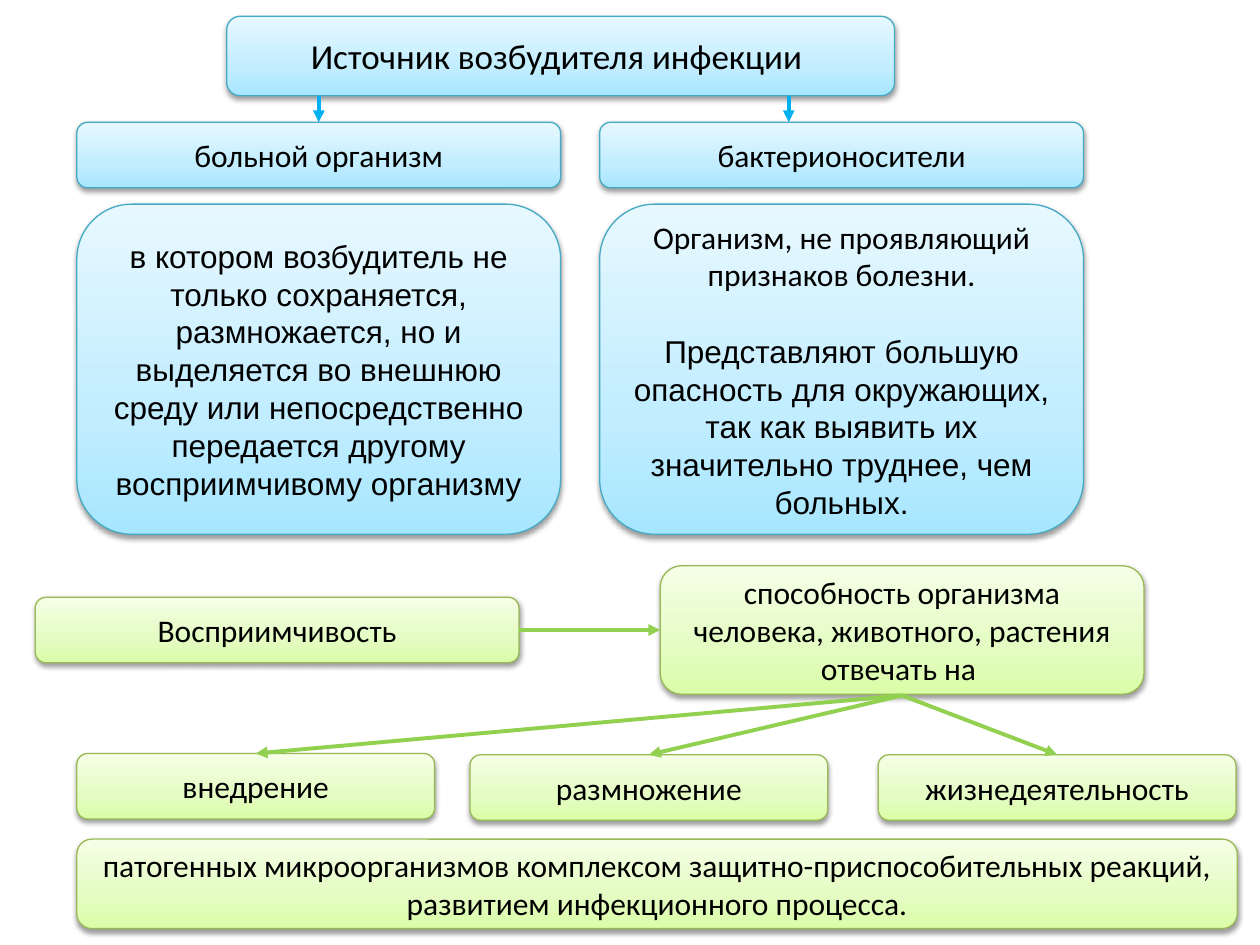
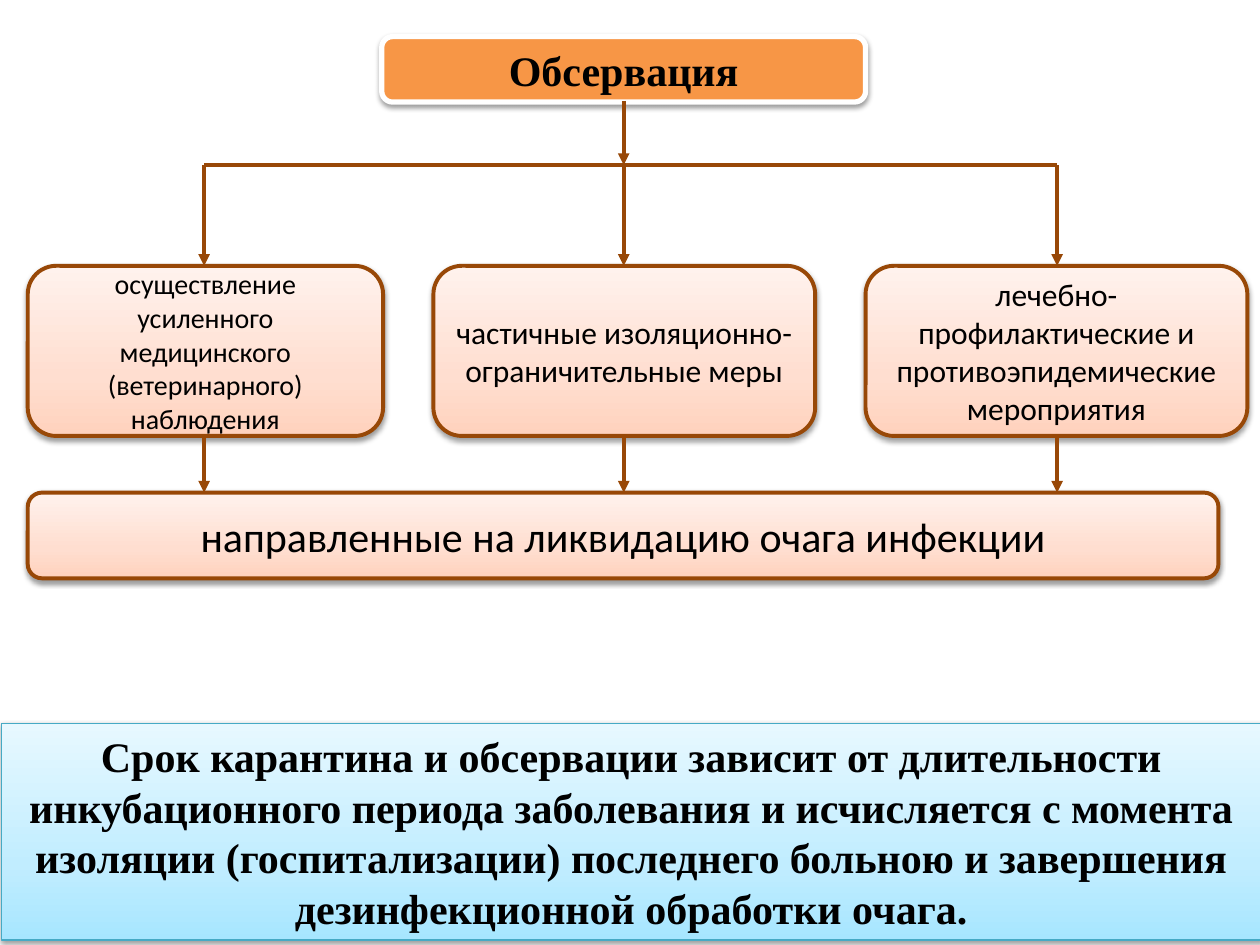
from copy import deepcopy

from lxml import etree
from pptx import Presentation
from pptx.dml.color import RGBColor
from pptx.enum import shapes, text
from pptx.oxml import ns
from pptx.util import Inches, Pt

BLACK = RGBColor(0x00, 0x00, 0x00)
WHITE = RGBColor(0xFF, 0xFF, 0xFF)
SKY = RGBColor(0x00, 0xB0, 0xF0)
LIME = RGBColor(0x92, 0xD0, 0x50)
BROWN = RGBColor(0x98, 0x48, 0x07)
ORANGE = RGBColor(0xF7, 0x96, 0x46)
TEAL = RGBColor(0x46, 0xAA, 0xC5)
OLIVE = RGBColor(0x98, 0xB9, 0x55)

# Gradient stops from bottom to top, at 0, 35 and 100 percent
BLUE_FADE = [RGBColor(0xA7, 0xE6, 0xFF), RGBColor(0xC1, 0xED, 0xFF), RGBColor(0xE7, 0xF8, 0xFF)]
GREEN_FADE = [RGBColor(0xDA, 0xFD, 0xA7), RGBColor(0xE4, 0xFC, 0xC2), RGBColor(0xF5, 0xFF, 0xE7)]
PEACH_FADE = [RGBColor(0xFF, 0xD2, 0xBD), RGBColor(0xFF, 0xDE, 0xD0), RGBColor(0xFF, 0xF2, 0xED)]

BLUE = dict(fade=BLUE_FADE, edge=TEAL)
GREEN = dict(fade=GREEN_FADE, edge=OLIVE)
PEACH = dict(fade=PEACH_FADE, edge=BROWN, edge_width=2.25)
ORANGE_PLATE = dict(fade=[ORANGE], edge=WHITE, edge_width=3)
SERIF_BOLD = dict(size=24, fonts=["Times New Roman"], bold=True)

ROUNDED = shapes.MSO_SHAPE.ROUNDED_RECTANGLE


def add_box(page, wording, left, top, width, height, *, fade, edge, edge_width=0.75,
            size=18, fonts=("Calibri",), bold=False, gap=0, outline=ROUNDED):
    """Add a shadowed box; each line of wording is a paragraph with its own font."""
    box = page.shapes.add_shape(outline, Inches(left), Inches(top), Inches(width), Inches(height))
    box.line.color.rgb = edge
    box.line.width = Pt(edge_width)
    properties = box.element.spPr
    if len(fade) == 1:
        box.fill.solid()
        box.fill.fore_color.rgb = fade[0]
    else:
        box.fill.gradient()
        box.fill.gradient_angle = 90
        stop_list = properties.find(".//" + ns.qn("a:gsLst"))
        stop_list.insert(1, deepcopy(stop_list[0]))
        for stop, position, colour in zip(box.fill.gradient_stops, (0, 0.35, 1), fade):
            stop.position = position
            stop.color.rgb = colour

    box.shadow.inherit = False
    effects = properties.find(ns.qn("a:effectLst"))
    shadow = etree.SubElement(effects, ns.qn("a:outerShdw"), blurRad=str(Pt(3.1)),
                              dist=str(Pt(1.6)), dir="5400000", rotWithShape="0")
    shade = etree.SubElement(shadow, ns.qn("a:srgbClr"), val=str(BLACK))
    etree.SubElement(shade, ns.qn("a:alpha"), val="38000")

    frame = box.text_frame
    frame.word_wrap = True
    frame.vertical_anchor = text.MSO_ANCHOR.MIDDLE
    frame.text = wording
    for para, font in zip(frame.paragraphs, fonts):
        para.alignment = text.PP_ALIGN.CENTER
        span = para.runs[0]
        span.font.name = font
        span.font.size = Pt(size)
        span.font.bold = bold
        span.font.color.rgb = BLACK
    if gap:
        frame.paragraphs[-1].space_before = Pt(gap)


def add_line(page, start, end, colour, arrow=True):
    line = page.shapes.add_connector(shapes.MSO_CONNECTOR.STRAIGHT,
                                     *map(Inches, start), *map(Inches, end))
    line.line.color.rgb = colour
    line.line.width = Pt(2.25)
    if arrow:
        etree.SubElement(line.line._get_or_add_ln(), ns.qn("a:tailEnd"), type="triangle")
    etree.SubElement(line.element.spPr, ns.qn("a:effectLst"))


deck = Presentation()
deck.slide_width = Inches(10)
deck.slide_height = Inches(7.5)
blank = deck.slide_layouts[6]

# Slide 1: source of infection and susceptibility
page = deck.slides.add_slide(blank)
add_box(page, "Источник возбудителя инфекции ", 1.8, 0.13, 5.3, 0.63, size=20, **BLUE)

sources = [
    (0.61, 2.53, "больной организм",
     "в котором возбудитель не только сохраняется, размножается, но и выделяется "
     "во внешнюю среду или непосредственно передается другому восприимчивому организму",
     ["Arial"]),
    (4.76, 6.26, "бактерионосители",
     "Организм, не проявляющий признаков болезни.\n"
     "Представляют большую опасность для окружающих, так как выявить их "
     "значительно труднее, чем больных.",
     ["Calibri", "Arial"]),
]
for left, arrow_x, heading, description, fonts in sources:
    add_line(page, (arrow_x, 0.76), (arrow_x, 0.97), SKY)
    add_box(page, heading, left, 0.97, 3.84, 0.52, **BLUE)
    add_box(page, description, left, 1.62, 3.84, 2.62, fonts=fonts,
            gap=22 if len(fonts) > 1 else 0, **BLUE)

add_box(page, "Восприимчивость", 0.28, 4.74, 3.84, 0.52, **GREEN)
add_box(page, "способность организма человека, животного, растения отвечать на ",
        5.24, 4.49, 3.84, 1.02, **GREEN)
add_line(page, (4.12, 5), (5.24, 5), LIME)

responses = [(0.61, 5.98, "внедрение"), (3.73, 5.99, "размножение"),
             (6.97, 5.99, "жизнедеятельность")]
for left, top, response in responses:
    add_box(page, response, left, top, 2.84, 0.52, **GREEN)
    add_line(page, (7.16, 5.52), (left + 1.42, top), LIME)
add_box(page, "патогенных микроорганизмов комплексом защитно-приспособительных реакций, "
        "развитием инфекционного процесса.", 0.61, 6.66, 9.21, 0.71, **GREEN)

# Slide 2: observation measures
page = deck.slides.add_slide(blank)
add_box(page, "Срок карантина и обсервации зависит от длительности инкубационного периода "
        "заболевания и исчисляется с момента изоляции (госпитализации) последнего больною "
        "и завершения дезинфекционной обработки очага.",
        0.01, 5.74, 10, 1.72, outline=shapes.MSO_SHAPE.RECTANGLE, **BLUE, **SERIF_BOLD)
add_box(page, "Обсервация", 3.03, 0.29, 3.84, 0.52, **ORANGE_PLATE, **SERIF_BOLD)
add_box(page, "направленные на ликвидацию очага инфекции", 0.22, 3.91, 9.45, 0.68,
        size=24, **PEACH)

add_line(page, (4.95, 0.8), (4.95, 1.31), BROWN)
add_line(page, (1.62, 1.31), (8.39, 1.31), BROWN, arrow=False)
measures = [
    (0.22, 2.82, 1.62, 16, "осуществление усиленного медицинского (ветеринарного) наблюдения"),
    (3.44, 3.03, 4.95, 18, "частичные изоляционно-ограничительные меры"),
    (6.87, 3.03, 8.39, 18, "лечебно-профилактические и противоэпидемические мероприятия"),
]
for left, width, center, size, measure in measures:
    add_box(page, measure, left, 2.11, width, 1.35, size=size, **PEACH)
    add_line(page, (center, 1.31), (center, 2.11), BROWN)
    add_line(page, (center, 3.46), (center, 3.91), BROWN)

deck.save("out.pptx")
